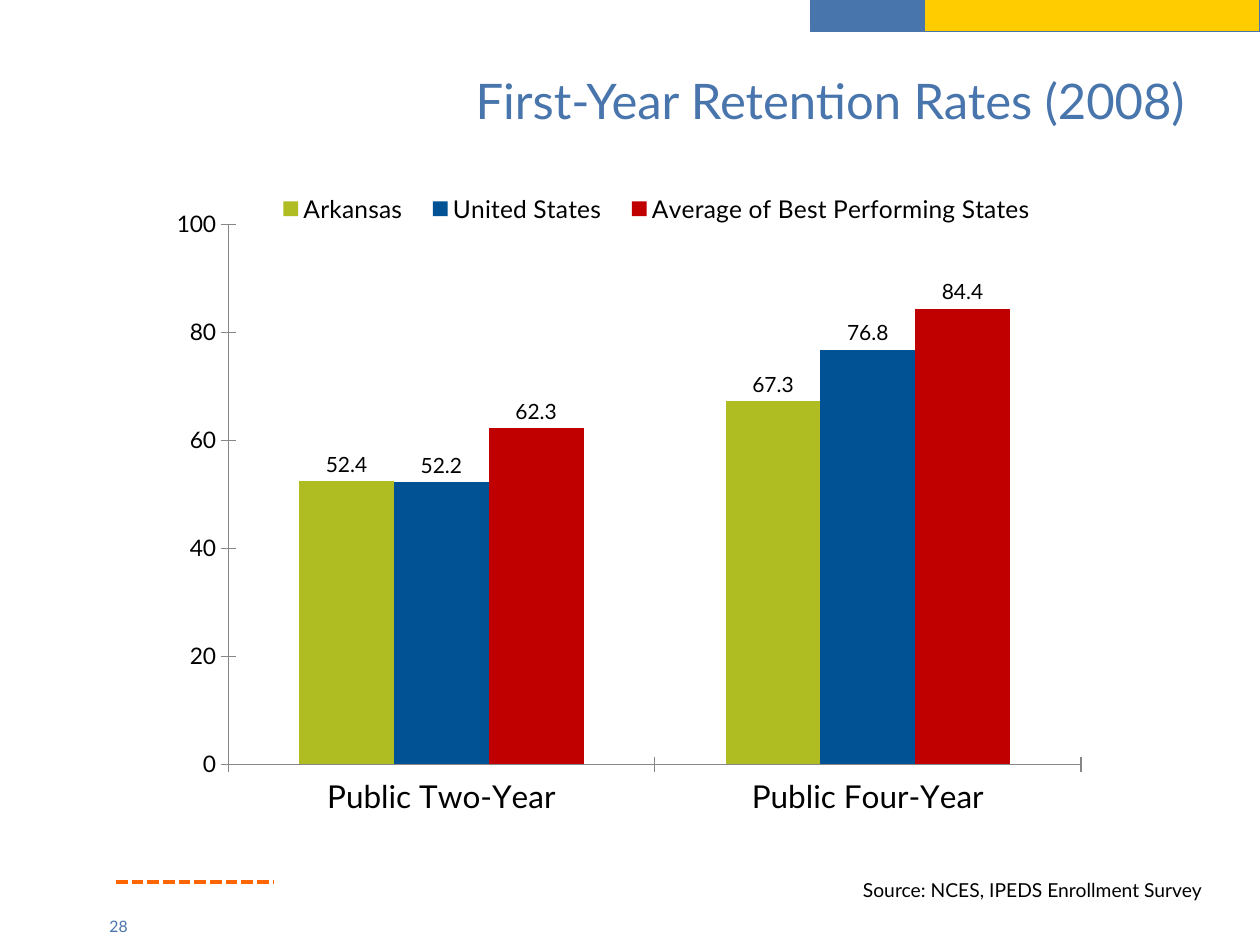
from lxml import etree
from pptx import Presentation
from pptx.chart.data import CategoryChartData
from pptx.dml.color import RGBColor
from pptx.enum.chart import XL_CHART_TYPE, XL_LABEL_POSITION, XL_LEGEND_POSITION, XL_TICK_MARK
from pptx.enum.dml import MSO_LINE
from pptx.enum.shapes import MSO_CONNECTOR, MSO_SHAPE
from pptx.enum.text import MSO_ANCHOR, PP_ALIGN
from pptx.oxml import parse_xml
from pptx.oxml.ns import nsdecls, qn
from pptx.util import Inches, Pt

COLUMNS = XL_CHART_TYPE.COLUMN_CLUSTERED
LABEL_ABOVE = XL_LABEL_POSITION.OUTSIDE_END
LEGEND_TOP = XL_LEGEND_POSITION.TOP
TICK = XL_TICK_MARK.CROSS
STRAIGHT = MSO_CONNECTOR.STRAIGHT
RECTANGLE = MSO_SHAPE.RECTANGLE
DOTTED = MSO_LINE.SQUARE_DOT
TOP, MIDDLE = MSO_ANCHOR.TOP, MSO_ANCHOR.MIDDLE
LEFT, RIGHT = PP_ALIGN.LEFT, PP_ALIGN.RIGHT

FONT = "Lato"
BLUE = RGBColor(0x49, 0x75, 0xAD)
YELLOW = RGBColor(0xFF, 0xCC, 0x00)
ORANGE = RGBColor(0xFF, 0x66, 0x00)
BLACK = RGBColor(0, 0, 0)
GRAY = RGBColor(0x86, 0x86, 0x86)

CATEGORIES = ["Public Two-Year", "Public Four-Year"]
SERIES = [
    ("Arkansas", [52.4, 67.3], RGBColor(0xAF, 0xBD, 0x22)),
    ("United States", [52.2, 76.8], RGBColor(0x00, 0x52, 0x95)),
    ("Average of Best Performing States", [62.3, 84.4], RGBColor(0xC0, 0x00, 0x00)),
]


def set_font(font, size, color=BLACK):
    font.name = FONT
    font.size = Pt(size)
    font.bold = False
    font.color.rgb = color


def add_text(s, box, text, size, color, align=LEFT, anchor=TOP, wrap=True):
    tf = s.shapes.add_textbox(*map(Inches, box)).text_frame
    tf.word_wrap = wrap
    tf.vertical_anchor = anchor
    tf.text = text
    p = tf.paragraphs[0]
    p.alignment = align
    set_font(p.runs[0].font, size, color)


def add_header_band(s, left, top, width, height):
    """Blue and yellow blocks side by side; blue takes about a quarter."""
    blue_width = 0.91
    blocks = [(left, blue_width, BLUE), (left + blue_width, width - blue_width, YELLOW)]
    for x, w, color in blocks:
        block = s.shapes.add_shape(RECTANGLE, Inches(x), Inches(top), Inches(w), Inches(height))
        block.shadow.inherit = False
        block.fill.solid()
        block.fill.fore_color.rgb = color
        block.line.color.rgb = BLUE
        block.line.width = Pt(0.75)


def add_footer(s, left, top, width):
    """Dotted rule, source note and page number."""
    rule = s.shapes.add_connector(
        STRAIGHT, Inches(left), Inches(top), Inches(left + width), Inches(top))
    rule.line.color.rgb = ORANGE
    rule.line.width = Pt(2.25)
    rule.line.dash_style = DOTTED
    etree.SubElement(rule._element.spPr, qn("a:effectLst"))
    add_text(s, (6.75, top - 0.08, 2.95, 0.29), "Source: NCES, IPEDS Enrollment Survey",
             11, BLACK, wrap=False)
    add_text(s, (left - 0.15, top + 0.23, 1, 0.27), "28", 9, BLUE)


def layout_xml(x, y, w, h, inner=False):
    """Manual layout, in fractions of the chart area."""
    target = '<c:layoutTarget val="inner"/>' if inner else ""
    return parse_xml(
        f'<c:layout {nsdecls("c")}><c:manualLayout>{target}'
        '<c:xMode val="edge"/><c:yMode val="edge"/>'
        f'<c:x val="{x}"/><c:y val="{y}"/><c:w val="{w}"/><c:h val="{h}"/>'
        '</c:manualLayout></c:layout>')


def set_layout(parent, layout, before):
    for old in parent.findall(qn("c:layout")):
        parent.remove(old)
    parent.find(qn(before)).addprevious(layout)


def add_retention_chart(s, box):
    data = CategoryChartData(number_format="0.0")
    data.categories = CATEGORIES
    for name, values, _ in SERIES:
        data.add_series(name, values)
    chart = s.shapes.add_chart(COLUMNS, *map(Inches, box), data).chart
    chart.has_title = False
    set_font(chart.font, 10)

    # Columns and their labels
    plot = chart.plots[0]
    plot.vary_by_categories = False
    plot.gap_width = 150
    plot.overlap = 0
    for series, (_, _, color) in zip(plot.series, SERIES):
        series.format.fill.solid()
        series.format.fill.fore_color.rgb = color
        labels = series.data_labels
        labels.show_value = True
        labels.number_format = "0.0"
        labels.number_format_is_linked = False
        labels.position = LABEL_ABOVE
        set_font(labels.font, 12)

    # Axes
    values = chart.value_axis
    values.minimum_scale, values.maximum_scale, values.major_unit = 0, 100, 20
    values.has_major_gridlines = False
    values.tick_labels.number_format = "0"
    values.tick_labels.number_format_is_linked = False
    for axis, size in ((chart.category_axis, 18), (values, 13)):
        axis.major_tick_mark = TICK
        axis.format.line.color.rgb = GRAY
        axis.format.line.width = Pt(0.75)
        set_font(axis.tick_labels.font, size)

    # Legend
    chart.has_legend = True
    legend = chart.legend
    legend.position = LEGEND_TOP
    legend.include_in_layout = False
    set_font(legend.font, 14)

    set_layout(legend._element, layout_xml(0.11, 0.06, 0.84, 0.06), "c:overlay")
    set_layout(plot._element.getparent(),
               layout_xml(0.075, 0.113, 0.905, 0.792, inner=True), "c:barChart")


def main():
    prs = Presentation()
    prs.slide_width, prs.slide_height = Inches(10), Inches(7.5)
    s = prs.slides.add_slide(prs.slide_layouts[6])
    add_header_band(s, 6.43, -0.01, 3.57, 0.26)
    add_text(s, (0.5, 0.27, 9, 1.05), "First-Year Retention Rates (2008)",
             28, BLUE, RIGHT, MIDDLE)
    add_retention_chart(s, (1.25, 1.17, 7.48, 5.41))
    add_footer(s, 0.92, 7, 1.25)
    prs.save("out.pptx")


if __name__ == "__main__":
    main()
